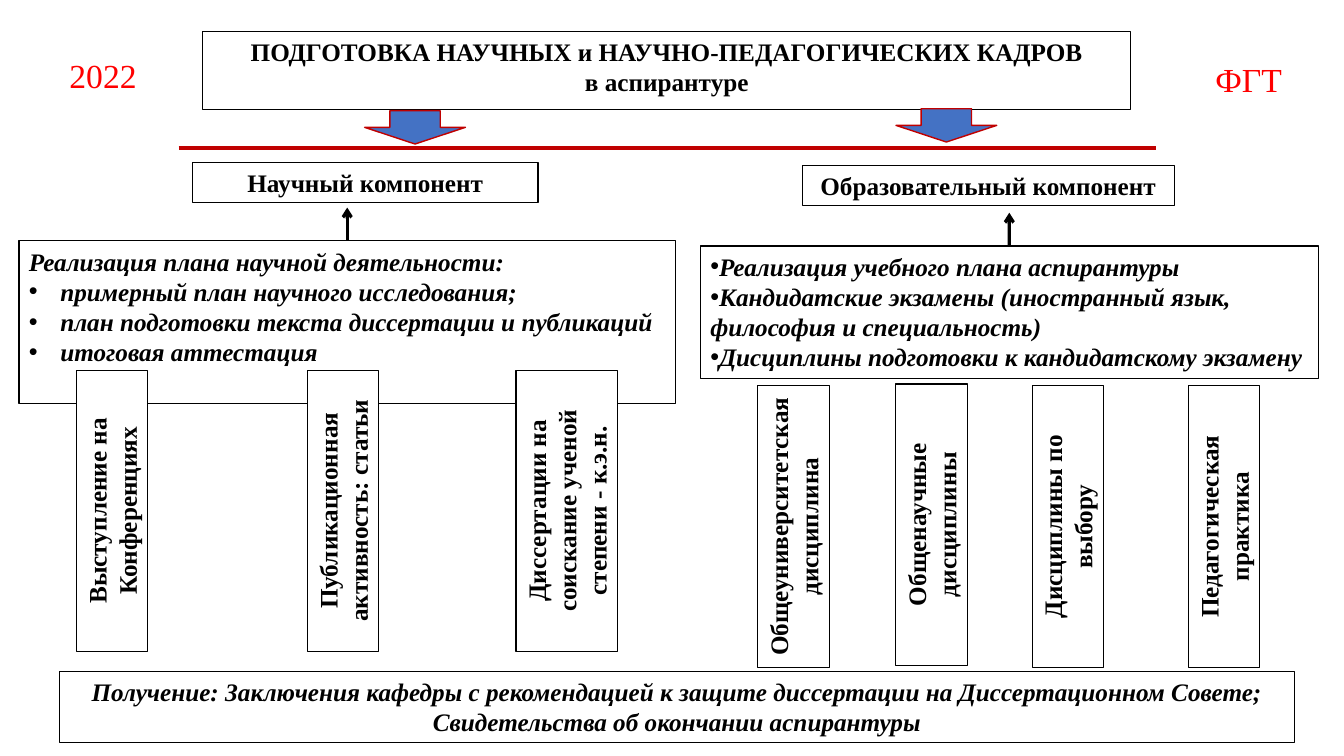
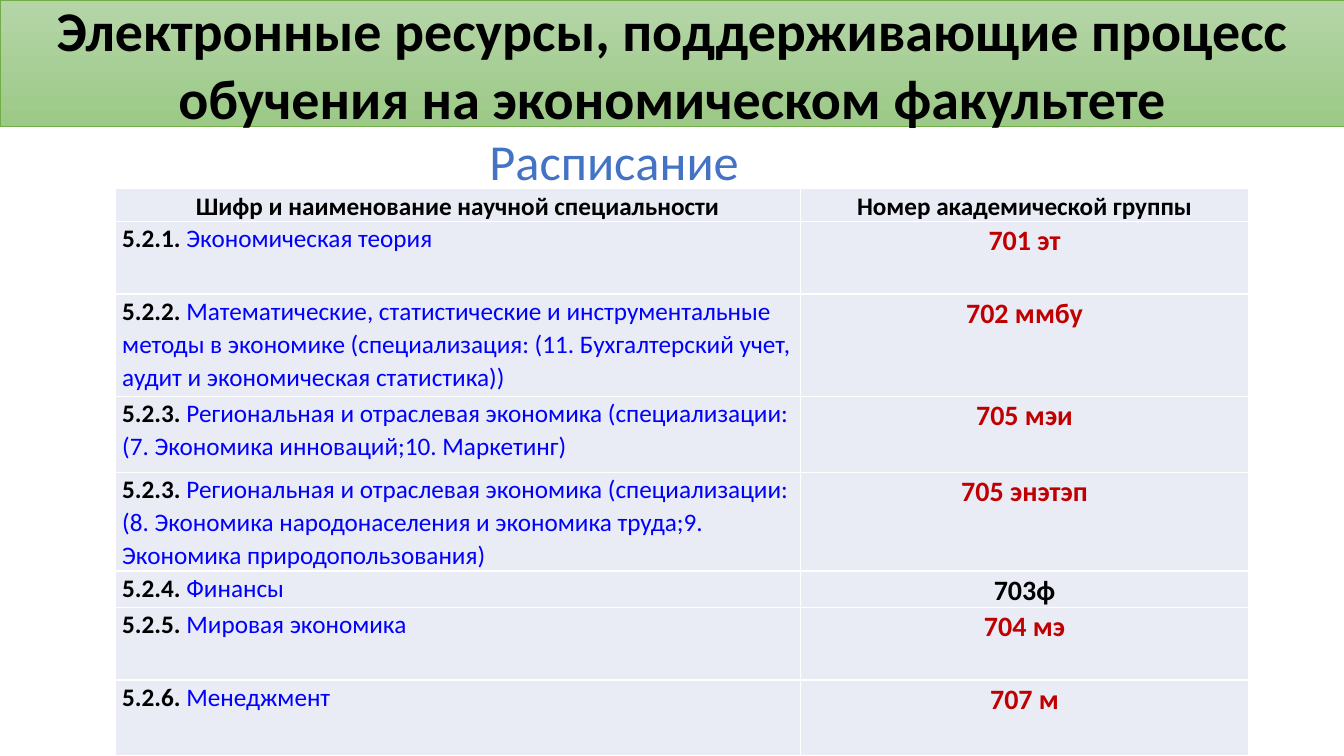
from dataclasses import dataclass

from lxml import etree
from pptx import Presentation
from pptx.dml.color import RGBColor
from pptx.enum.shapes import MSO_CONNECTOR, MSO_SHAPE
from pptx.enum.text import MSO_ANCHOR, MSO_AUTO_SIZE, PP_ALIGN
from pptx.oxml.ns import qn
from pptx.presentation import Presentation as Deck
from pptx.shapes.autoshape import Shape
from pptx.shapes.connector import Connector
from pptx.slide import Slide
from pptx.table import _Cell
from pptx.text.text import TextFrame
from pptx.util import Cm, Pt

LEFT, CENTER = PP_ALIGN.LEFT, PP_ALIGN.CENTER
TOP, MIDDLE = MSO_ANCHOR.TOP, MSO_ANCHOR.MIDDLE
RECT, DOWN = MSO_SHAPE.RECTANGLE, MSO_SHAPE.DOWN_ARROW
STRAIGHT = MSO_CONNECTOR.STRAIGHT
FIXED = MSO_AUTO_SIZE.NONE
TITLE_ONLY = 5


@dataclass(frozen=True)
class Theme:
    serif: str = "Times New Roman"
    sans: str = "Calibri"
    black: str = "000000"
    white: str = "FFFFFF"
    red: str = "FF0000"
    dark: str = "C00000"
    blue: str = "4472C4"
    link: str = "0000FF"
    cell: str = "E9EBF5"
    green: str = "70AD47"
    light: str = "B5D5A7"
    deep: str = "9CC987"
    body: int = 18
    group: int = 20
    tag: int = 24
    sub: int = 36
    head: int = 40


@dataclass(frozen=True)
class Area:
    x: float
    y: float
    w: float
    h: float


@dataclass(frozen=True)
class Box:
    area: Area
    text: str
    italic: bool = False
    align: PP_ALIGN = CENTER
    hang: float = 0
    turn: int = 0


@dataclass(frozen=True)
class Row:
    code: str
    name: str
    group: str
    high: float
    color: str


T = Theme()
SLAB = 7.09


def slab(x: float, y: float, text: str, thick: float = 1.8) -> Box:
    return Box(Area(x - SLAB / 2, y - thick / 2, SLAB, thick), text, turn=270)


TAGS = [
    (Area(1.5, 1.27, 2.24, 1.27), "2022"),
    (Area(30.38, 1.37, 2.21, 1.27), "ФГТ"),
]
PARTS = [
    Box(Area(20.22, 4.17, 9.37, 1.02), "Образовательный компонент"),
    Box(Area(4.85, 4.09, 8.71, 1.02), "Научный компонент"),
]
PLANS = [
    Box(Area(17.65, 6.2, 15.57, 3.33),
        "•Реализация учебного плана аспирантуры\n"
        "•Кандидатские экзамены (иностранный язык, философия и специальность)\n"
        "•Дисциплины подготовки к кандидатскому экзамену",
        italic=True, align=LEFT),
    Box(Area(0.48, 6.07, 16.54, 4.11),
        "Реализация плана научной деятельности:\n"
        "•примерный план научного исследования;\n"
        "•план подготовки текста диссертации и публикаций\n"
        "•итоговая аттестация",
        italic=True, align=LEFT, hang=0.79),
]
STEPS = [
    slab(2.83, 12.87, "Выступление на Конференциях"),
    slab(8.65, 12.87, "Публикационная активность: статьи"),
    slab(14.29, 12.87, "Диссертации на соискание ученой степени - к.э.н.", 2.57),
    slab(20, 13.27, "Общеуниверситетская дисциплина"),
    slab(23.48, 13.22, "Общенаучные дисциплины"),
    slab(26.91, 13.27, "Дисциплины по выбору"),
    slab(30.85, 13.27, "Педагогическая практика"),
]
RESULT = Box(
    Area(1.5, 16.92, 31.12, 1.8),
    "Получение: Заключения кафедры с рекомендацией к защите диссертации на "
    "Диссертационном Совете; Свидетельства об окончании аспирантуры",
    italic=True)
ROWS = [
    Row("5.2.1.", "Экономическая теория", "701 эт", 1.82, T.dark),
    Row("5.2.2.", "Математические, статистические и инструментальные методы в "
        "экономике (специализация: (11. Бухгалтерский учет, аудит и "
        "экономическая статистика))", "702 ммбу", 2.58, T.dark),
    Row("5.2.3.", "Региональная и отраслевая экономика (специализации: "
        "(7. Экономика инноваций;10. Маркетинг)", "705 мэи", 1.91, T.dark),
    Row("5.2.3.", "Региональная и отраслевая экономика (специализации: "
        "(8. Экономика народонаселения и экономика труда;9. Экономика "
        "природопользования)", "705 энэтэп", 2.45, T.dark),
    Row("5.2.4.", "Финансы", "703ф", 0.9, T.black),
    Row("5.2.5.", "Мировая экономика", "704 мэ", 1.82, T.dark),
    Row("5.2.6.", "Менеджмент", "707 м", 1.91, T.dark),
]


def rgb(code: str) -> RGBColor:
    return RGBColor.from_string(code)


def span(area: Area) -> tuple[Cm, Cm, Cm, Cm]:
    return Cm(area.x), Cm(area.y), Cm(area.w), Cm(area.h)


def write(frame: TextFrame, text: str, *, size: int = T.body,
          color: str = T.black, font: str = T.serif, bold: bool = True,
          italic: bool = False, align: PP_ALIGN = CENTER, space: float = 1,
          hang: float = 0, lead: str = "") -> None:
    for num, line in enumerate(text.split("\n")):
        para = frame.add_paragraph() if num else frame.paragraphs[0]
        para.alignment = align
        para.line_spacing = space
        if line.startswith("•"):
            props = para._p.get_or_add_pPr()
            props.set("marL", str(Cm(hang)))
            props.set("indent", str(-Cm(hang)))
            etree.SubElement(props, qn("a:buFont"), typeface="Arial")
            etree.SubElement(props, qn("a:buChar"), char="•")
        bits = [(line.lstrip("•"), color, bold)]
        if lead:
            bits.insert(0, (lead + " ", T.black, True))
        for part, tint, heavy in bits:
            run = para.add_run()
            run.text = part
            face = run.font
            face.name, face.size = font, Pt(size)
            face.bold, face.italic = heavy, italic
            face.color.rgb = rgb(tint)


def paint(shape: Shape, fill: str, line: str, width: float) -> None:
    shape.shadow.inherit = False
    shape.fill.solid()
    shape.fill.fore_color.rgb = rgb(fill)
    shape.line.color.rgb = rgb(line)
    shape.line.width = Pt(width)


def setup(frame: TextFrame, anchor: MSO_ANCHOR = TOP, wrap: bool = True) -> None:
    frame.auto_size = FIXED
    frame.word_wrap = wrap
    frame.vertical_anchor = anchor


def head(slide: Slide, area: Area, anchor: MSO_ANCHOR) -> Shape:
    title = slide.shapes.title
    title.left, title.top, title.width, title.height = span(area)
    setup(title.text_frame, anchor)
    paint(title, T.white, T.black, 0.75)
    return title


def block(slide: Slide, box: Box) -> Shape:
    shape = slide.shapes.add_shape(RECT, *span(box.area))
    paint(shape, T.white, T.black, 0.75)
    shape.rotation = box.turn
    setup(shape.text_frame)
    write(shape.text_frame, box.text, italic=box.italic, align=box.align,
          hang=box.hang)
    return shape


def label(slide: Slide, area: Area, text: str, *, size: int, color: str,
          font: str, align: PP_ALIGN) -> None:
    frame = slide.shapes.add_textbox(*span(area)).text_frame
    setup(frame, wrap=False)
    write(frame, text, size=size, color=color, font=font, bold=False, align=align)


def rule(slide: Slide, start: tuple[float, float], end: tuple[float, float],
         color: str, width: float, tip: bool = False) -> Connector:
    line = slide.shapes.add_connector(
        STRAIGHT, *(Cm(val) for val in (*start, *end)))
    line.line.color.rgb = rgb(color)
    line.line.width = Pt(width)
    props = line._element.spPr
    if tip:
        etree.SubElement(props.find(qn("a:ln")), qn("a:tailEnd"), type="arrow")
    etree.SubElement(props, qn("a:effectLst"))
    return line


def style(cell: _Cell) -> None:
    cell.margin_left = cell.margin_right = Cm(0.18)
    cell.margin_top = cell.margin_bottom = 0
    props = cell._tc.get_or_add_tcPr()
    for side in ("lnL", "lnR", "lnT", "lnB"):
        edge = etree.SubElement(props, qn(f"a:{side}"), w=str(Pt(1)))
        fill = etree.SubElement(edge, qn("a:solidFill"))
        etree.SubElement(fill, qn("a:srgbClr"), val=T.white)
    cell.fill.solid()
    cell.fill.fore_color.rgb = rgb(T.cell)


def scheme(deck: Deck) -> None:
    slide = deck.slides.add_slide(deck.slide_layouts[TITLE_ONLY])
    title = head(slide, Area(5.11, 0.79, 23.39, 1.98), TOP)
    write(title.text_frame,
          "ПОДГОТОВКА НАУЧНЫХ и НАУЧНО-ПЕДАГОГИЧЕСКИХ КАДРОВ\nв аспирантуре")
    for part in PARTS:
        block(slide, part)
    for plan in PLANS:
        shape = block(slide, plan)
        mid, top = plan.area.x + plan.area.w / 2, plan.area.y
        line = rule(slide, (mid, top), (mid, top - 0.84), T.black, 2.25, tip=True)
        line.begin_connect(shape, 0)
    rule(slide, (4.5, 3.73), (29.13, 3.73), T.dark, 3)
    for x, y in ((9.19, 2.79), (22.58, 2.74)):
        arrow = slide.shapes.add_shape(DOWN, *span(Area(x, y, 2.54, 0.84)))
        paint(arrow, T.blue, T.dark, 1)
    for area, text in TAGS:
        label(slide, area, text, size=T.tag, color=T.red, font=T.serif, align=LEFT)
    for box in (*STEPS, RESULT):
        block(slide, box)


def timing(deck: Deck) -> None:
    slide = deck.slides.add_slide(deck.slide_layouts[TITLE_ONLY])
    title = head(slide, Area(0, 0, 33.87, 3.18), MIDDLE)
    paint(title, T.light, T.green, 0.5)
    title.fill.gradient()
    title.fill.gradient_angle = 270
    for stop, color in zip(title.fill.gradient_stops, (T.light, T.deep)):
        stop.color.rgb = rgb(color)
    write(title.text_frame,
          "Электронные ресурсы, поддерживающие процесс обучения на "
          "экономическом факультете", size=T.head, font=T.sans)
    label(slide, Area(12.04, 3.15, 6.88, 1.8), "Расписание", size=T.sub,
          color=T.blue, font=T.sans, align=CENTER)
    highs = [0.79, *(row.high for row in ROWS)]
    area = Area(2.9, 4.76, 28.57, sum(highs))
    table = slide.shapes.add_table(len(highs), 2, *span(area)).table
    table.first_row = table.horz_banding = False
    for col, wide in zip(table.columns, (17.27, 11.3)):
        col.width = Cm(wide)
    for line, high in zip(table.rows, highs):
        line.height = Cm(high)
    for cell in table.iter_cells():
        style(cell)
    names = ("Шифр и наименование научной специальности",
             "Номер академической группы")
    for col, name in enumerate(names):
        write(table.cell(0, col).text_frame, name, font=T.sans, space=1.07)
    for num, row in enumerate(ROWS, 1):
        write(table.cell(num, 0).text_frame, row.name, lead=row.code,
              color=T.link, font=T.sans, bold=False, align=LEFT, space=1.07)
        write(table.cell(num, 1).text_frame, row.group, size=T.group,
              color=row.color, font=T.sans, space=1.07)


def main() -> None:
    deck = Presentation()
    deck.slide_width, deck.slide_height = Cm(33.87), Cm(19.05)
    scheme(deck)
    timing(deck)
    deck.save("out.pptx")


if __name__ == "__main__":
    main()
